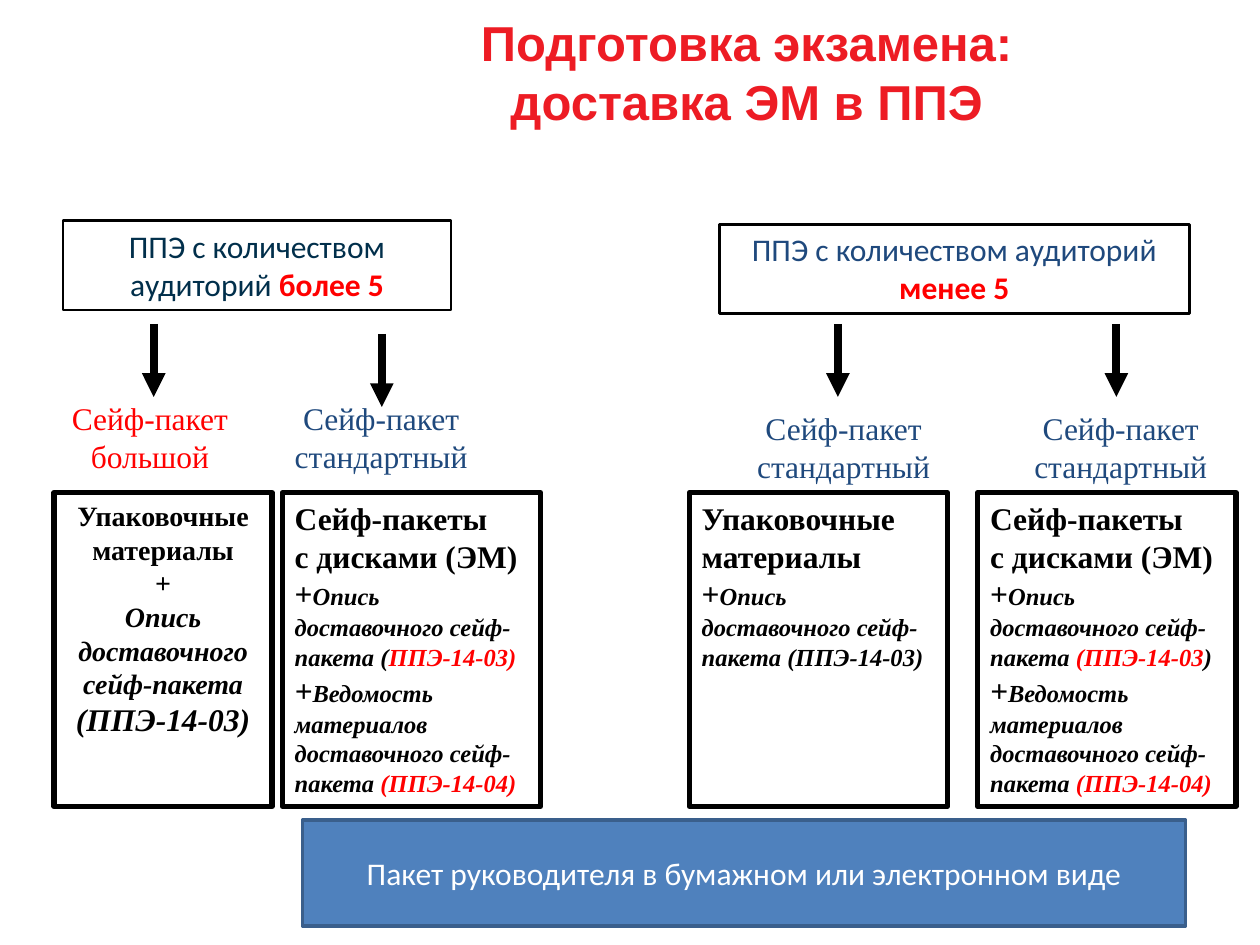
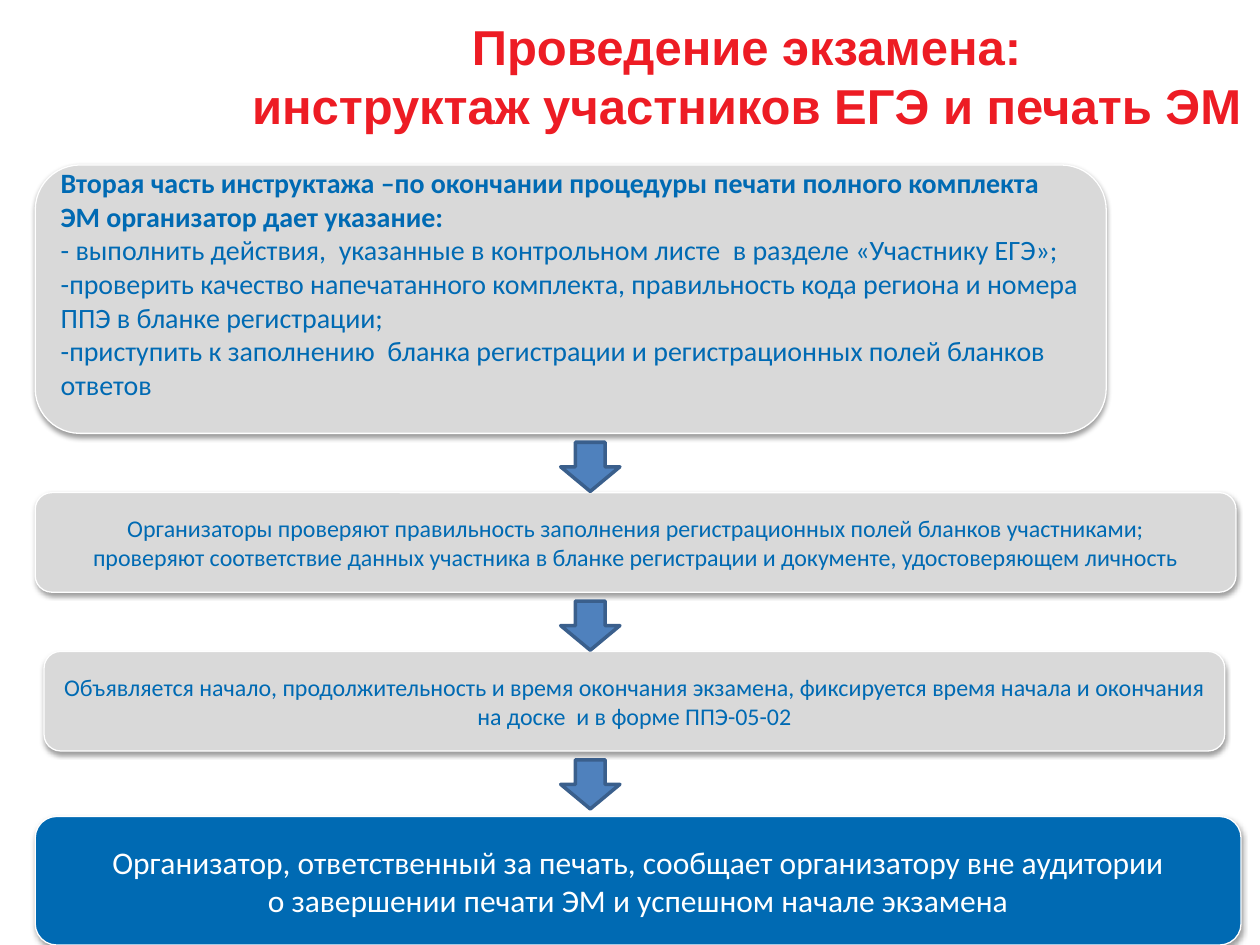
from collections import namedtuple

from lxml import etree
from pptx import Presentation
from pptx.dml.color import RGBColor
from pptx.enum.shapes import MSO_CONNECTOR, MSO_SHAPE
from pptx.enum.text import MSO_ANCHOR, PP_ALIGN
from pptx.oxml.ns import qn
from pptx.util import Inches, Pt

RECT, ROUNDED, DOWN = MSO_SHAPE.RECTANGLE, MSO_SHAPE.ROUNDED_RECTANGLE, MSO_SHAPE.DOWN_ARROW
STRAIGHT = MSO_CONNECTOR.STRAIGHT
LEFT, CENTER = PP_ALIGN.LEFT, PP_ALIGN.CENTER
TOP, MIDDLE = MSO_ANCHOR.TOP, MSO_ANCHOR.MIDDLE

# Shared look; the slide is a grid of 100 columns by 75 rows
COLUMNS, ROWS = 100, 75
UNIT = Inches(10) / COLUMNS
TITLE_RED, RED, BLACK, WHITE = "ED1C24", "FF0000", "000000", "FFFFFF"
NAVY, DARK, STEEL, STEEL_EDGE = "1F497D", "012F4B", "4F81BD", "3A5F8C"
GREY, BLUE = "D9D9D9", "006AB3"
SANS, SERIF, TITLE_FONT = "Calibri", "Times New Roman", "Arial"

Box = namedtuple("Box", "left top width height")
Part = namedtuple("Part", "text size color bold italic", defaults=(False, False))


def color(hex_string):
    return RGBColor.from_string(hex_string)


def grid(*lengths):
    return [round(length * UNIT) for length in lengths]


def inside(box, left, top, width, height):
    """A box given relative to the corner of another one."""
    return Box(box.left + left, box.top + top, width, height)


def write(shape, paragraphs, font_name, align=CENTER, anchor=TOP):
    """Fill a shape with paragraphs, each a list of parts."""
    frame = shape.text_frame
    frame.word_wrap = True
    frame.vertical_anchor = anchor
    for index, parts in enumerate(paragraphs):
        paragraph = frame.add_paragraph() if index else frame.paragraphs[0]
        paragraph.alignment = align
        for part in parts:
            for row, line in enumerate(part.text.split("\n")):
                if row:
                    paragraph.add_line_break()
                run = paragraph.add_run()
                run.text = line
                run.font.name, run.font.size = font_name, Pt(part.size)
                run.font.bold, run.font.italic = part.bold, part.italic
                run.font.color.rgb = color(part.color)


def add_text(slide, box, paragraphs, font_name, **layout):
    write(slide.shapes.add_textbox(*grid(*box)), paragraphs, font_name, **layout)


def add_panel(slide, preset, box, fill, edge, edge_width):
    panel = slide.shapes.add_shape(preset, *grid(*box))
    panel.shadow.inherit = False
    if fill:
        panel.fill.solid()
        panel.fill.fore_color.rgb = color(fill)
    else:
        panel.fill.background()
    panel.line.color.rgb = color(edge)
    panel.line.width = Pt(edge_width)
    return panel


def add_soft_shadow(panel):
    effects = panel._element.spPr.find(qn("a:effectLst"))
    shadow = etree.SubElement(effects, qn("a:outerShdw"), blurRad=str(Pt(3.1)),
                              dist=str(Pt(1.6)), dir="5400000", rotWithShape="0")
    tint = etree.SubElement(shadow, qn("a:srgbClr"), val=BLACK)
    etree.SubElement(tint, qn("a:alpha"), val="38000")


def add_title(slide, box, text):
    add_text(slide, box, [[Part(text, 28, TITLE_RED, True)]], TITLE_FONT, anchor=MIDDLE)


def add_arrow(slide, x, top, length):
    arrow = slide.shapes.add_connector(STRAIGHT, *grid(x, top, x, top + length))
    arrow.line.color.rgb = color(BLACK)
    arrow.line.width = Pt(4.5)
    etree.SubElement(arrow.line._get_or_add_ln(), qn("a:tailEnd"), type="triangle")
    etree.SubElement(arrow._element.spPr, qn("a:effectLst"))


# Slide 1: what each kind of exam site receives
def bold(text, size=18, ink=BLACK):
    return Part(text, size, ink, True)


def slanted(text, ink=BLACK, size=14):
    return Part(text, size, ink, True, True)


def disc_packets(*inventory_form):
    return [[bold("Сейф-пакеты\nс дисками (ЭМ) +"),
             slanted("Опись доставочного сейф-пакета "), *inventory_form,
             slanted("+", size=18),
             slanted("Ведомость материалов доставочного сейф-пакета "),
             slanted("(ППЭ-14-04)", RED)]]


def add_branch(slide, box, heading_box, count, ink, packets):
    """Heading, then for each packet an arrow, a label and its contents."""
    heading = add_panel(slide, RECT, inside(box, *heading_box), None, BLACK, 1.5)
    write(heading, [[Part("ППЭ с количеством аудиторий ", 18, ink),
                     Part(count, 18, RED, True)]], SANS)
    contents_height = 24.9
    contents_top = box.height - contents_height
    for packet in packets:
        add_arrow(slide, box.left + packet["arrow"][0], box.top + packet["arrow"][1], 5.8)
        label_left, label_top, label_width = packet["label_at"]
        add_text(slide, inside(box, label_left, label_top, label_width, 7.1),
                 [[Part(packet["label"], 18, packet["ink"])]], SERIF)
        left, width = packet["span"]
        contents = add_panel(slide, RECT, inside(box, left, contents_top, width, contents_height),
                             None, BLACK, 3)
        write(contents, packet["contents"], SERIF, align=packet.get("align", LEFT))


def build_delivery(slide):
    add_title(slide, Box(18.9, -0.2, 80.7, 11.7), "Подготовка экзамена:\nдоставка ЭМ в ППЭ")
    standard = {"label": "Сейф-пакет стандартный", "ink": NAVY}

    # Sites with many rooms
    add_branch(slide, Box(4.3, 17.5, 38.6, 46.5), (0.7, 0, 30.8, 7.1), "более 5", DARK, [
        {"label": "Сейф-пакет большой", "ink": RED, "arrow": (7.9, 8.2),
         "label_at": (0, 13.7, 15.2), "span": (0, 17.3), "align": CENTER,
         "contents": [[bold("Упаковочные материалы", 16)], [bold("+", 16)],
                      [slanted("Опись доставочного сейф-пакета ", size=16),
                       slanted("(ППЭ-14-03)", size=18)]]},
        {**standard, "arrow": (26, 9), "label_at": (18.1, 13.7, 15.7), "span": (18.1, 20.5),
         "contents": disc_packets(slanted("("), slanted("ППЭ-14-03) ", RED))},
    ])

    # Sites with few rooms
    add_branch(slide, Box(54.7, 17.5, 43.4, 46.5), (2.4, 0.3, 37.3, 7.1), "менее 5", NAVY, [
        {**standard, "arrow": (11.8, 8.2), "label_at": (4, 14.5, 16.5), "span": (0, 20.5),
         "contents": [[bold("Упаковочные материалы")],
                      [bold("+"), slanted("Опись доставочного сейф-пакета (ППЭ-14-03)")]]},
        {**standard, "arrow": (33.9, 8.2), "label_at": (26, 14.5, 16.5), "span": (22.9, 20.5),
         "contents": disc_packets(slanted("(ППЭ-14-03", RED), slanted(") "))},
    ])

    # Band below both branches
    band = add_panel(slide, RECT, Box(24, 65.1, 70.1, 8.4), STEEL, STEEL_EDGE, 2)
    write(band, [[Part("Пакет руководителя в бумажном или электронном виде", 18, WHITE)]],
          SANS, anchor=MIDDLE)


# Slide 2: the steps of the briefing, top to bottom
def add_step(slide, box, paragraphs, fill=GREY, align=CENTER):
    step = add_panel(slide, ROUNDED, box, fill, WHITE, 0.75)
    add_soft_shadow(step)
    write(step, paragraphs, SANS, align=align, anchor=MIDDLE)
    return step


def add_steps(slide, box):
    step_gap, first_check = 12.6, 26

    # Briefing
    briefing = [[Part("Вторая часть инструктажа –по окончании процедуры печати полного "
                      "комплекта ЭМ организатор дает указание:", 16, BLUE, True)]]
    briefing += [[Part(line, 16, BLUE)] for line in (
        "- выполнить действия,  указанные в контрольном листе  в разделе «Участнику ЕГЭ»;",
        "-проверить качество напечатанного комплекта, правильность кода региона и номера "
        "ППЭ в бланке регистрации;",
        "-приступить к заполнению  бланка регистрации и регистрационных полей бланков ответов")]
    step = add_step(slide, inside(box, 0, 0, 85, 21.3), briefing, align=LEFT)
    step.text_frame.margin_bottom = Inches(0.3)

    # Checks and start of the exam
    checks = [
        (0, 95.3, ["Организаторы проверяют правильность заполнения регистрационных полей "
                   "бланков участниками;",
                   "проверяют соответствие данных участника в бланке регистрации и документе, "
                   "удостоверяющем личность"]),
        (0.7, 93.7, ["Объявляется начало, продолжительность и время окончания экзамена, "
                     "фиксируется время начала и окончания на доске  и в форме ППЭ-05-02"]),
    ]
    for index, (left, width, lines) in enumerate(checks):
        add_step(slide, inside(box, left, first_check + index * step_gap, width, 7.9),
                 [[Part(line, 13.7, BLUE)] for line in lines])

    # Final report
    add_step(slide, inside(box, 0, box.height - 10.2, box.width, 10.2),
             [[Part("Организатор, ответственный за печать, сообщает организатору вне аудитории\n"
                    "о завершении печати ЭМ и успешном начале экзамена", 18, WHITE)]], fill=BLUE)

    # Arrows between the steps
    for index in range(3):
        add_panel(slide, DOWN, inside(box, 41.7, first_check - 4 + index * step_gap, 4.7, 3.9),
                  STEEL, STEEL_EDGE, 2)


def build_briefing(slide):
    add_title(slide, Box(18.5, 0, 81.5, 11.9),
              "Проведение экзамена:\nинструктаж участников ЕГЭ и печать ЭМ")
    add_steps(slide, Box(2.8, 13.1, 95.7, 61.9))


def main():
    deck = Presentation()
    deck.slide_width, deck.slide_height = grid(COLUMNS, ROWS)
    blank = deck.slide_layouts[6]
    for build in (build_delivery, build_briefing):
        build(deck.slides.add_slide(blank))
    deck.save("out.pptx")


if __name__ == "__main__":
    main()
